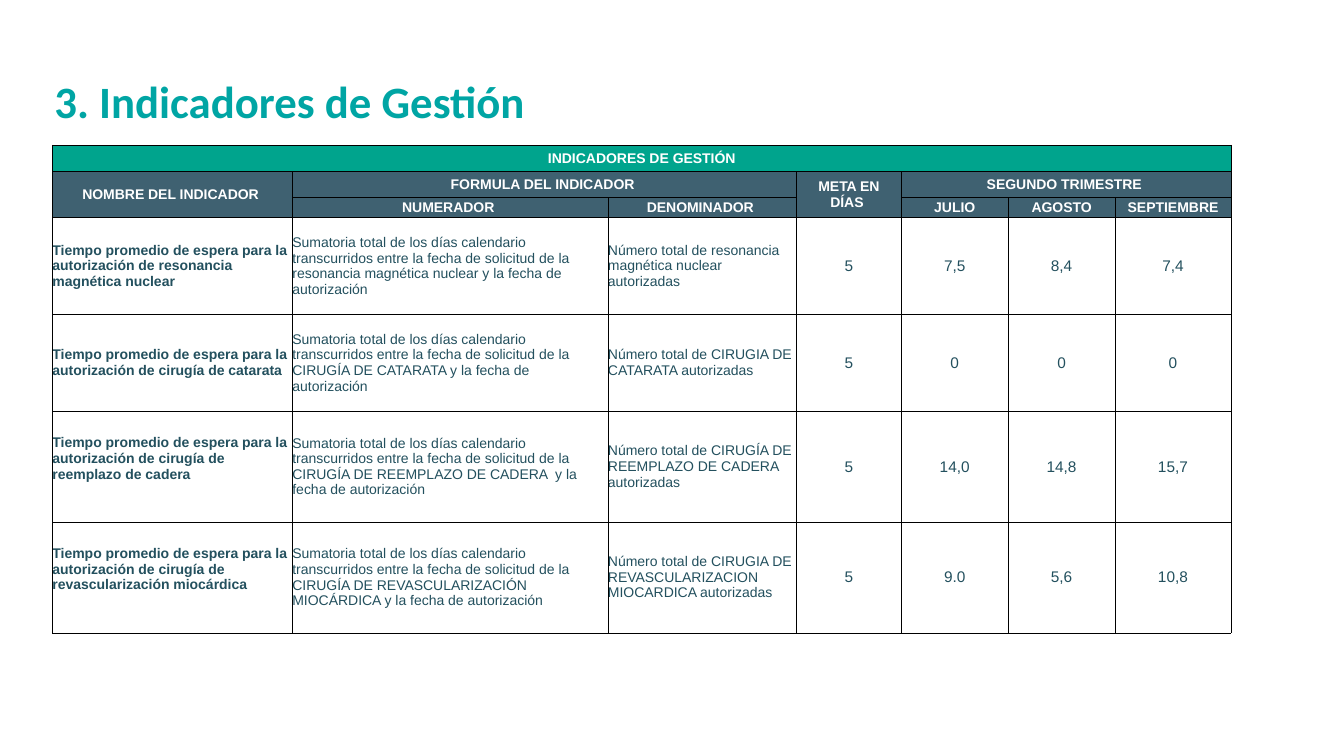
from pptx import Presentation
from pptx.dml.color import RGBColor
from pptx.enum.text import MSO_ANCHOR, MSO_AUTO_SIZE, PP_ALIGN
from pptx.oxml import parse_xml
from pptx.oxml.ns import nsdecls
from pptx.util import Inches, Pt

# Content
WIDTHS = [2.38, 3.13, 1.87, 1.04, 1.06, 1.06, 1.15]
HEIGHTS = [0.26, 0.26, 0.2, 0.96, 0.96, 1.1, 1.1]

# Row, column, rows down, columns across, text
HEADS = [
    (0, 0, 1, 7, "INDICADORES DE GESTIÓN"),
    (1, 0, 2, 1, "NOMBRE DEL INDICADOR "),
    (1, 1, 1, 2, "FORMULA DEL INDICADOR "),
    (1, 3, 2, 1, "META EN DÍAS "),
    (1, 4, 1, 3, "SEGUNDO TRIMESTRE "),
    (2, 1, 1, 1, "NUMERADOR "),
    (2, 2, 1, 1, "DENOMINADOR "),
    (2, 4, 1, 1, "JULIO"),
    (2, 5, 1, 1, "AGOSTO"),
    (2, 6, 1, 1, "SEPTIEMBRE"),
]

NAME = "Tiempo promedio de espera para la autorización de "
SUM = ("Sumatoria total de los días calendario transcurridos "
       "entre la fecha de solicitud de la ")
COUNT = "Número total de "

# Name, numerator, denominator, goal and months, space below the name
ROWS = [
    ("resonancia magnética nuclear",
     "resonancia magnética nuclear y la fecha de autorización",
     "resonancia magnética nuclear autorizadas",
     ["5", "7,5", "8,4", "7,4"], 0),
    ("cirugía de catarata ",
     "CIRUGÍA DE CATARATA y la fecha de autorización",
     "CIRUGIA DE CATARATA autorizadas",
     ["5", "0", "0", "0"], 0),
    ("cirugía de reemplazo de cadera ",
     "CIRUGÍA DE REEMPLAZO DE CADERA  y la fecha de autorización",
     "CIRUGÍA DE REEMPLAZO DE CADERA autorizadas",
     ["5", "14,0", "14,8", "15,7"], 0.16),
    ("cirugía de revascularización miocárdica",
     "CIRUGÍA DE REVASCULARIZACIÓN MIOCÁRDICA y la fecha de autorización",
     "CIRUGIA DE REVASCULARIZACION MIOCARDICA autorizadas",
     ["5", "9.0", "5,6", "10,8"], 0.16),
]


def tint(code):
    return RGBColor.from_string(code)


class Deck:
    teal, green, slate, ink = "00A5A4", "00A48D", "3F6171", "23505E"
    white, black = "FFFFFF", "000000"
    head = {"name": "Arial", "size": Pt(10), "bold": True}
    body = {"name": "Arial", "size": Pt(10), "bold": False}
    value = {"name": "Arial", "size": Pt(11), "bold": False}
    title_font = {"name": "Calibri", "size": Pt(32), "bold": True}

    def __init__(self):
        self.show = Presentation()
        self.show.slide_width = Inches(13.33)
        self.show.slide_height = Inches(7.5)
        self.slide = self.show.slides.add_slide(self.show.slide_layouts[5])

    def label(self, frame, text, form, color, align):
        para = frame.paragraphs[0]
        para.text = text
        para.alignment = align
        font = para.runs[0].font
        for key, val in form.items():
            setattr(font, key, val)
        font.color.rgb = tint(color)

    def title(self, text, left, top, width, height):
        box = self.slide.shapes.title
        place = {"left": left, "top": top, "width": width, "height": height}
        for key, val in place.items():
            setattr(box, key, Inches(val))
        frame = box.text_frame
        frame.auto_size = MSO_AUTO_SIZE.NONE
        frame.vertical_anchor = MSO_ANCHOR.MIDDLE
        self.label(frame, text, self.title_font, self.teal, PP_ALIGN.LEFT)

    def grid(self, left, top, widths, heights):
        frame = self.slide.shapes.add_table(
            len(heights), len(widths), Inches(left), Inches(top),
            Inches(sum(widths)), Inches(sum(heights)))
        table = frame.table
        table.first_row = table.horz_banding = False
        for col, width in zip(table.columns, widths):
            col.width = Inches(width)
        for row, height in zip(table.rows, heights):
            row.height = Inches(height)
        for cell in table.iter_cells():
            self.edge(cell)
        return table

    def edge(self, cell):
        props = cell._tc.get_or_add_tcPr()
        for side in "LRTB":
            props.append(parse_xml(
                f'<a:ln{side} {nsdecls("a")} w="{Pt(0.5)}"><a:solidFill>'
                f'<a:srgbClr val="{self.black}"/></a:solidFill></a:ln{side}>'))

    def cell(self, cell, text, form, color, fill,
             align=PP_ALIGN.CENTER, pad=(0, 0, 0, 0)):
        for side, gap in zip(("left", "top", "right", "bottom"), pad):
            setattr(cell, f"margin_{side}", Inches(gap))
        cell.vertical_anchor = MSO_ANCHOR.MIDDLE
        cell.fill.solid()
        cell.fill.fore_color.rgb = tint(fill)
        self.label(cell.text_frame, text, form, color, align)


def main():
    deck = Deck()
    deck.title("3. Indicadores de Gestión", 0.44, 0.68, 7.2, 0.64)
    table = deck.grid(0.52, 1.44, WIDTHS, HEIGHTS)

    # Header rows
    for row, col, down, across, text in HEADS:
        cell = table.cell(row, col)
        if down * across > 1:
            cell.merge(table.cell(row + down - 1, col + across - 1))
        pad = (0.1, 0.05, 0.1, 0.05) if row < 2 else (0, 0, 0, 0)
        fill = deck.slate if row else deck.green
        deck.cell(cell, text, deck.head, deck.white, fill, pad=pad)

    # Indicator rows
    for row, (name, top, base, values, gap) in enumerate(ROWS, 3):
        words = [(NAME + name, deck.head, gap), (SUM + top, deck.body, 0),
                 (COUNT + base, deck.body, 0)]
        for col, (text, form, low) in enumerate(words):
            deck.cell(table.cell(row, col), text, form, deck.ink, deck.white,
                      PP_ALIGN.LEFT, (0, 0, 0, low))
        for col, text in enumerate(values, len(words)):
            deck.cell(table.cell(row, col), text, deck.value, deck.ink,
                      deck.white)

    deck.show.save("out.pptx")


if __name__ == "__main__":
    main()
